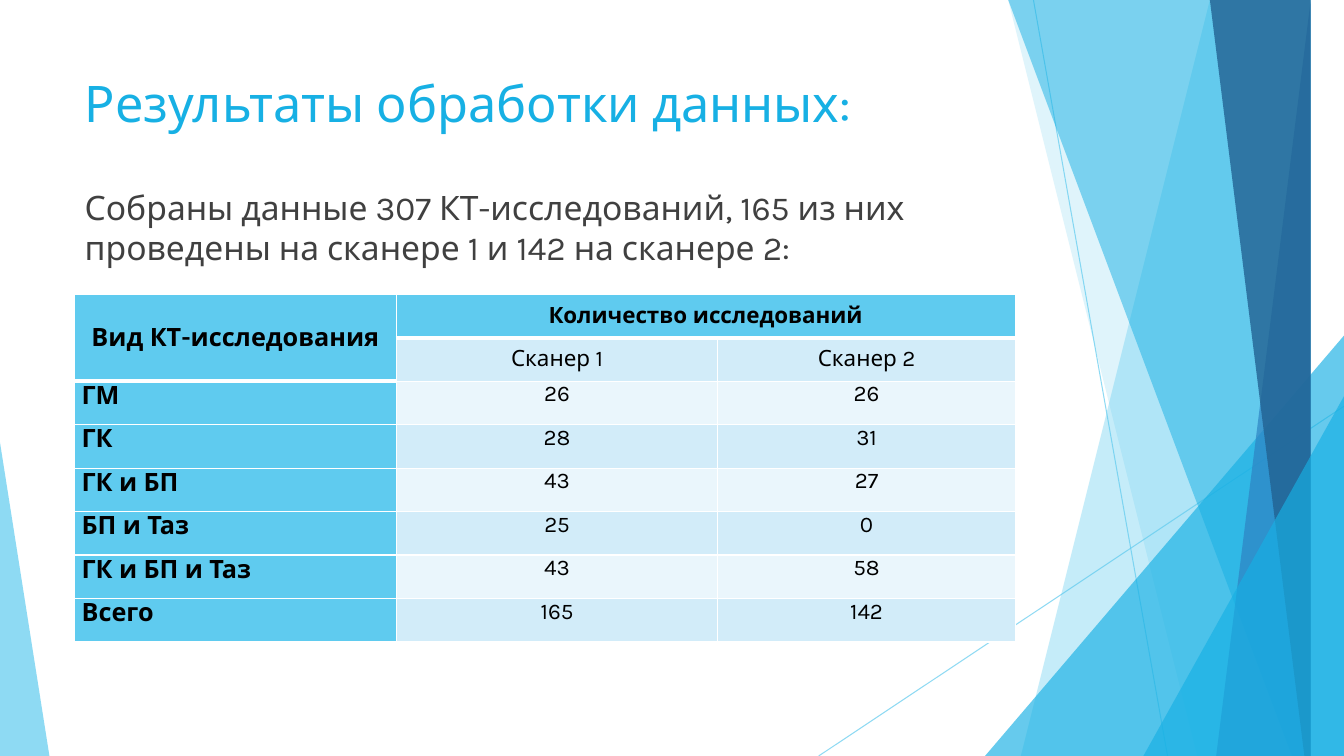
from lxml import etree
from pptx import Presentation
from pptx.dml.color import RGBColor
from pptx.enum.shapes import MSO_CONNECTOR, MSO_SHAPE
from pptx.enum.text import MSO_ANCHOR, PP_ALIGN
from pptx.oxml.ns import qn
from pptx.util import Inches, Pt

TITLE = "Результаты обработки данных:"
SUMMARY = ("Собраны данные 307 КТ-исследований, 165 из них проведены "
           "на сканере 1 и 142 на сканере 2:")
ROWS = [
    ("Вид КТ-исследования", "Количество исследований", ""),
    ("", "Сканер 1", "Сканер 2"),
    ("ГМ", "26", "26"),
    ("ГК", "28", "31"),
    ("ГК и БП", "43", "27"),
    ("БП и Таз", "25", "0"),
    ("ГК и БП и Таз", "43", "58"),
    ("Всего", "165", "142"),
]
COLUMN_WIDTHS = (3.19, 3.19, 2.95)

FONT = "Karla"
SKY = RGBColor(0x5F, 0xCB, 0xEF)
CYAN = RGBColor(0x17, 0xB0, 0xE4)
BLUE = RGBColor(0x2E, 0x83, 0xC3)
NAVY = RGBColor(0x22, 0x62, 0x92)
BAND_DARK = RGBColor(0xD2, 0xEC, 0xF9)
BAND_LIGHT = RGBColor(0xEA, 0xF6, 0xFC)
GRAY = RGBColor(0x40, 0x40, 0x40)
BLACK = RGBColor(0, 0, 0)
WHITE = RGBColor(0xFF, 0xFF, 0xFF)

CENTER, JUSTIFY = PP_ALIGN.CENTER, PP_ALIGN.JUSTIFY
TOP, MIDDLE = MSO_ANCHOR.TOP, MSO_ANCHOR.MIDDLE
STRAIGHT, TRIANGLE = MSO_CONNECTOR.STRAIGHT, MSO_SHAPE.ISOSCELES_TRIANGLE

WIDTH, HEIGHT = 13.33, 7.5
RAY_TOP = -0.01
THIN_LINES = [(10.25, 0, 11.58, HEIGHT), (WIDTH, 4.03, 8.12, HEIGHT)]
# Rays reach the right edge: top-left x, bottom-left x, colour, opacity %
# Corners sit on the bottom edge: left, width, height, apex (0 left, 1 right), colour, opacity %
DECORATIONS = [
    ("ray", 12.28, 10.04, SKY, 36),
    ("ray", 10.5, 11.83, SKY, 20),
    ("corner", 9.77, 3.56, 4.17, 1, CYAN, 66),
    ("ray", 10.21, 12.91, CYAN, 50),
    ("ray", 13.03, 11.92, BLUE, 70),
    ("ray", 11.96, 13.18, NAVY, 80),
    ("corner", 11.34, 1.99, 3.57, 1, CYAN, 66),
    ("corner", 0, 0.49, 3.11, 0, SKY, 70),
]


def set_opacity(color_parent, percent):
    color = color_parent.find(".//" + qn("a:srgbClr"))
    etree.SubElement(color, qn("a:alpha"), val=str(percent * 1000))


def add_thin_line(slide, ends):
    line = slide.shapes.add_connector(STRAIGHT, *map(Inches, ends))
    line.line.color.rgb = SKY
    line.line.width = Pt(0.75)
    properties = line.element.spPr
    set_opacity(properties, 70)
    etree.SubElement(properties, qn("a:effectLst"))


def add_ray(slide, top_x, bottom_x):
    builder = slide.shapes.build_freeform(top_x, RAY_TOP, scale=Inches(1))
    builder.add_line_segments(
        [(WIDTH, RAY_TOP), (WIDTH, HEIGHT), (bottom_x, HEIGHT)], close=True)
    return builder.convert_to_shape()


def add_corner(slide, left, width, height, apex):
    corner = slide.shapes.add_shape(
        TRIANGLE, *map(Inches, (left, HEIGHT - height, width, height)))
    corner.adjustments[0] = apex
    return corner


def add_decorations(slide):
    for ends in THIN_LINES:
        add_thin_line(slide, ends)
    for kind, *geometry, color, opacity in DECORATIONS:
        add = add_ray if kind == "ray" else add_corner
        part = add(slide, *geometry)
        part.shadow.inherit = False
        part.line.fill.background()
        part.fill.solid()
        part.fill.fore_color.rgb = color
        set_opacity(part.element.spPr, opacity)


def style_paragraph(paragraph, size, color, align, bold=False):
    paragraph.alignment = align
    font = paragraph.font
    font.name, font.size, font.bold = FONT, Pt(size), bold
    font.color.rgb = color


def fill_placeholder(placeholder, box, text, size, color):
    """Place the placeholder in front of the decorations and write its text."""
    placeholder.left, placeholder.top, placeholder.width, placeholder.height = map(Inches, box)
    placeholder.element.getparent().append(placeholder.element)
    frame = placeholder.text_frame
    frame.text = text
    frame.vertical_anchor = TOP
    paragraph = frame.paragraphs[0]
    style_paragraph(paragraph, size, color, PP_ALIGN.LEFT)
    return paragraph


def add_borders(cell, bottom_width, top_width):
    properties = cell._tc.get_or_add_tcPr()
    for side, width in (("L", 1), ("R", 1), ("T", top_width), ("B", bottom_width)):
        border = etree.SubElement(properties, qn(f"a:ln{side}"), w=str(Pt(width)))
        fill = etree.SubElement(border, qn("a:solidFill"))
        etree.SubElement(fill, qn("a:srgbClr"), val=str(WHITE))


def add_results_table(slide):
    table = slide.shapes.add_table(
        len(ROWS), len(COLUMN_WIDTHS), Inches(0.74), Inches(2.92),
        Inches(sum(COLUMN_WIDTHS)), Inches(3.45)).table
    for column, width in zip(table.columns, COLUMN_WIDTHS):
        column.width = Inches(width)
    table.cell(0, 0).merge(table.cell(1, 0))
    table.cell(0, 1).merge(table.cell(0, 2))

    for r, row in enumerate(ROWS):
        for c, text in enumerate(row):
            cell = table.cell(r, c)
            is_label, is_header = c == 0, r < 2
            is_heading = is_label or r == 0
            header_end = 1 if is_label else 0
            add_borders(cell, 3 if r == header_end else 1,
                        3 if r == header_end + 1 else 1)
            band = BAND_DARK if r % 2 else BAND_LIGHT
            cell.fill.solid()
            cell.fill.fore_color.rgb = SKY if is_heading else band
            cell.margin_left = cell.margin_right = Inches(0.07)
            cell.margin_top = cell.margin_bottom = 0
            cell.vertical_anchor = MIDDLE if is_header else TOP
            if text:
                cell.text = text
            style_paragraph(cell.text_frame.paragraphs[0], 18 if is_label else 16, BLACK,
                            JUSTIFY if is_label and not is_header else CENTER, is_heading)


def main():
    deck = Presentation()
    deck.slide_width, deck.slide_height = Inches(WIDTH), Inches(HEIGHT)
    slide = deck.slides.add_slide(deck.slide_layouts[1])
    add_decorations(slide)
    fill_placeholder(slide.shapes.title, (0.74, 0.67, 9.4, 0.8), TITLE, 36, CYAN)
    summary = fill_placeholder(
        slide.placeholders[1], (0.74, 1.8, 9.4, 4.24), SUMMARY, 24, GRAY)
    summary.space_before = Pt(10)
    summary_properties = summary._p.get_or_add_pPr()
    summary_properties.set("marL", "0")
    summary_properties.set("indent", "0")
    no_bullet = etree.Element(qn("a:buNone"))
    summary_properties.find(qn("a:spcBef")).addnext(no_bullet)
    add_results_table(slide)
    deck.save("out.pptx")


if __name__ == "__main__":
    main()
